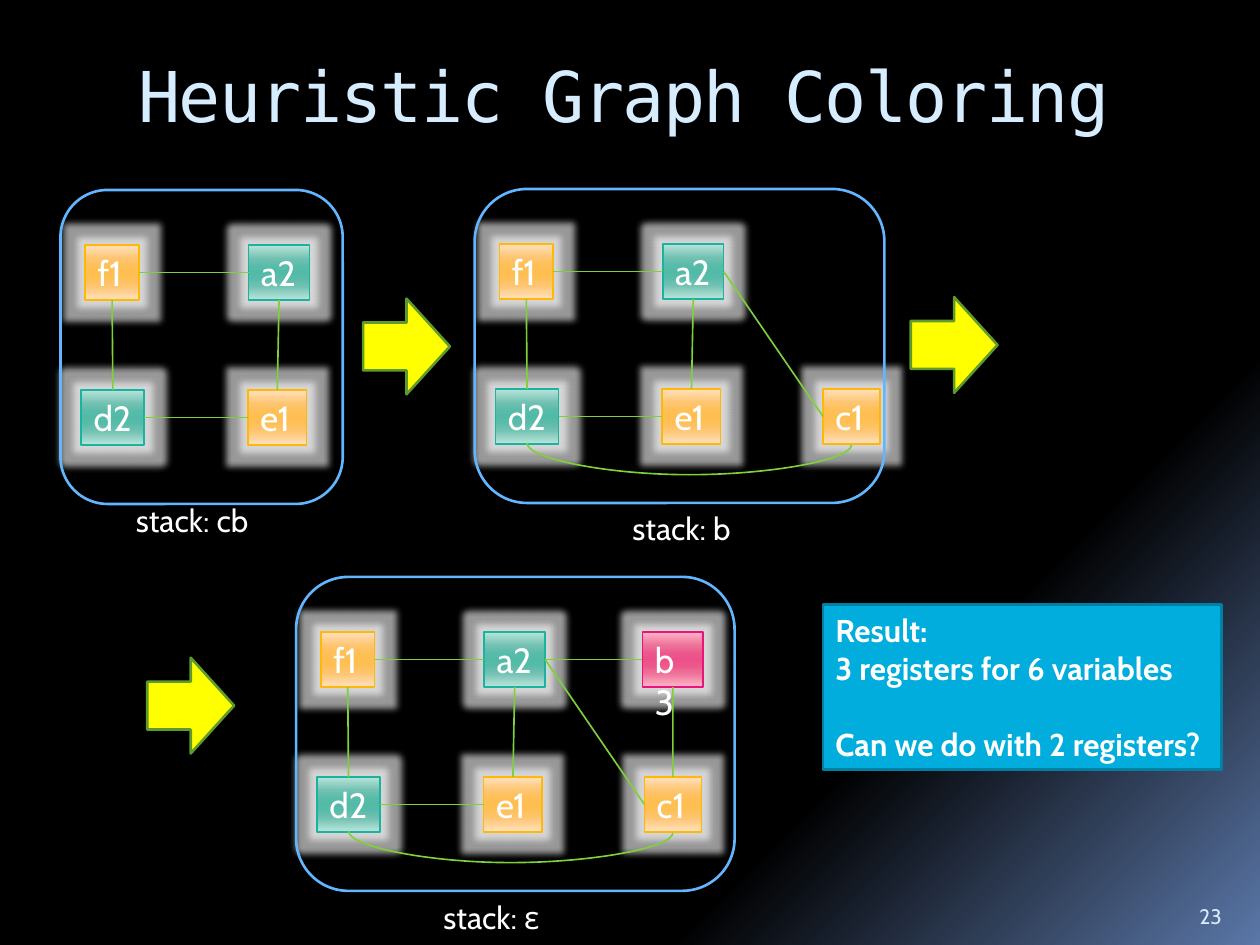
from dataclasses import dataclass

from lxml.etree import SubElement
from pptx import Presentation
from pptx.dml.color import RGBColor
from pptx.enum.shapes import MSO_CONNECTOR as Link, MSO_SHAPE as Kind
from pptx.enum.text import MSO_ANCHOR as Anchor, MSO_AUTO_SIZE as Auto, PP_ALIGN as Align
from pptx.oxml.ns import qn
from pptx.util import Cm, Pt

BLACK = RGBColor(0x00, 0x00, 0x00)
WHITE = RGBColor(0xFF, 0xFF, 0xFF)
NAVY = RGBColor(0x5B, 0x77, 0xA8)
PALE = RGBColor(0xD6, 0xEC, 0xFF)
SKY = RGBColor(0x61, 0xB6, 0xFF)
GREEN = RGBColor(0x7F, 0xD1, 0x3B)
MOSS = RGBColor(0x5E, 0x9B, 0x2C)
YELLOW = RGBColor(0xFF, 0xFF, 0x00)
CYAN = RGBColor(0x00, 0xAD, 0xDC)
TEAL = RGBColor(0x00, 0x80, 0xA3)

# One look per register: edge colour, then the tones from rim to centre
LOOKS = {
    "1": (RGBColor(0xFE, 0xB8, 0x0A), RGBColor(0xFF, 0xE1, 0xBF), RGBColor(0xFE, 0xC5, 0x70),
          RGBColor(0xFE, 0xBF, 0x55), RGBColor(0xFE, 0xBE, 0x51)),
    "2": (RGBColor(0x1A, 0xB3, 0x9F), RGBColor(0xBB, 0xE5, 0xDB), RGBColor(0x71, 0xC1, 0xB2),
          RGBColor(0x57, 0xBB, 0xA9), RGBColor(0x53, 0xBA, 0xA8)),
    "3": (RGBColor(0xEA, 0x15, 0x7A), RGBColor(0xFF, 0xB6, 0xC9), RGBColor(0xED, 0x71, 0x98),
          RGBColor(0xEC, 0x56, 0x8B), RGBColor(0xEC, 0x52, 0x89)),
}
STEPS = (0, 25, 40, 50, 60, 75, 100)

BODY = {"name": "Cabin", "size": Pt(18)}
BOLD = BODY | {"bold": True}
NODE = BODY | {"size": Pt(20)}
SMALL = BODY | {"size": Pt(12)}
HEAD = {"name": "DejaVu Sans Mono", "size": Pt(40)}

HIGH, DROP = 1.11, 2.92
TOP, LEFT, BASE, RIGHT = range(4)


@dataclass
class Node:
    x: float
    row: int
    wide: float


@dataclass
class Graph:
    x: float
    y: float
    wide: float
    names: tuple
    label: str
    at: tuple


NODES = {
    "f1": Node(0, 0, 1.08), "a2": Node(3.29, 0, 1.23), "b3": Node(6.48, 0, 1.23),
    "d2": Node(-0.08, 1, 1.27), "e1": Node(3.28, 1, 1.18), "c1": Node(6.52, 1, 1.15),
}
EDGES = (
    ("f1", RIGHT, "a2", LEFT), ("a2", RIGHT, "b3", LEFT), ("d2", TOP, "f1", BASE),
    ("e1", LEFT, "d2", RIGHT), ("a2", BASE, "e1", TOP), ("b3", BASE, "c1", TOP),
    ("a2", RIGHT, "c1", LEFT),
)
GRAPHS = (
    Graph(6.47, 12.74, 8.84, tuple(NODES), "stack: ε", (8.69, 17.98, 2.49, 1.02)),
    Graph(10.07, 4.92, 8.26, ("f1", "a2", "d2", "e1", "c1"), "stack: b",
          (12.5, 10.13, 2.54, 1.02)),
    Graph(1.72, 4.94, 5.69, ("f1", "a2", "d2", "e1"), "stack: cb", (2.49, 9.98, 2.82, 1.02)),
)
ARROWS = ((18.36, 5.99), (7.32, 6.02), (2.97, 13.26))


def shade(root, stops, angle: int) -> None:
    """Replace the stops of the gradient found under root."""
    grad = root.find(".//" + qn("a:gradFill"))
    bag = grad.find(qn("a:gsLst"))
    for old in list(bag):
        bag.remove(old)
    for pos, tone in stops:
        stop = SubElement(bag, qn("a:gs"), pos=str(pos * 1000))
        SubElement(stop, qn("a:srgbClr"), val=str(tone))
    grad.find(qn("a:lin")).set("ang", str(angle * 60000))


def write(frame, lines, form: dict, tone=WHITE, wrap=True, anchor=Anchor.TOP) -> None:
    frame.word_wrap = wrap
    frame.vertical_anchor = anchor
    for i, line in enumerate(lines):
        para = frame.paragraphs[0] if i == 0 else frame.add_paragraph()
        para.alignment = Align.LEFT
        run = para.add_run()
        run.text = line
        for key, value in form.items():
            setattr(run.font, key, value)
        run.font.color.rgb = tone


def label(slide, text: str, box: tuple, form: dict, tone=WHITE, anchor=Anchor.TOP) -> None:
    frame = slide.shapes.add_textbox(*map(Cm, box)).text_frame
    write(frame, [text], form, tone, False, anchor)


def block(slide, kind, box: tuple, edge, width=1.5, fill=None):
    shape = slide.shapes.add_shape(kind, *map(Cm, box))
    shape.shadow.inherit = False
    shape.line.color.rgb = edge
    shape.line.width = Pt(width)
    if fill is None:
        shape.fill.background()
    else:
        shape.fill.solid()
        shape.fill.fore_color.rgb = fill
    return shape


def square(slide, name: str, x: float, y: float, wide: float):
    """Draw a glowing node in the look of its register."""
    edge, *tones = LOOKS[name[-1]]
    shape = block(slide, Kind.RECTANGLE, (x, y, wide, HIGH), edge, 0.94)
    shape.fill.gradient()
    props = shape._element.spPr
    shade(props, zip(STEPS, tones + tones[-2::-1]), 90)
    glow = SubElement(props.find(qn("a:effectLst")), qn("a:glow"), rad="101600")
    tint = SubElement(glow, qn("a:srgbClr"), val=str(WHITE))
    SubElement(tint, qn("a:alpha"), val="60000")
    write(shape.text_frame, [name], NODE, wrap=False)
    shape.text_frame.auto_size = Auto.SHAPE_TO_FIT_TEXT
    return shape


def wire(slide, kind):
    line = slide.shapes.add_connector(kind, 0, 0, 0, 0)
    line.line.color.rgb = GREEN
    line.line.width = Pt(0.94)
    SubElement(line._element.spPr, qn("a:effectLst"))
    return line


def sag(slide, start, end) -> None:
    """Hang a curve below two nodes: a thin upright connector, turned."""
    line = wire(slide, Link.CURVE)
    left = start.left + start.width // 2
    span = end.left + end.width // 2 - left
    thin = Cm(0.04)
    line.left, line.top = left + (span - thin) // 2, start.top + start.height - span // 2
    line.width, line.height = thin, span
    props = line._element.spPr
    form = props.find(qn("a:xfrm"))
    form.set("rot", str(270 * 60000))
    form.set("flipH", "1")
    bag = props.find(qn("a:prstGeom")).find(qn("a:avLst"))
    SubElement(bag, qn("a:gd"), name="adj1", fmla="val 1600000")


def draw(slide, graph: Graph) -> None:
    boxes = {}
    for name in graph.names:
        node = NODES[name]
        boxes[name] = square(slide, name, graph.x + node.x, graph.y + node.row * DROP, node.wide)
    for start, out, end, into in EDGES:
        if start in boxes and end in boxes:
            line = wire(slide, Link.STRAIGHT)
            line.begin_connect(boxes[start], out)
            line.end_connect(boxes[end], into)
    if "c1" in boxes:
        sag(slide, boxes["d2"], boxes["c1"])
    block(slide, Kind.ROUNDED_RECTANGLE, (graph.x - 0.5, graph.y - 1.11, graph.wide, 6.33), SKY)
    label(slide, graph.label, graph.at, BODY)


def main() -> None:
    deck = Presentation()
    deck.slide_width, deck.slide_height = Cm(25.4), Cm(19.05)
    slide = deck.slides.add_slide(deck.slide_layouts[5])
    slide.background.fill.gradient()
    shade(slide._element, ((65, BLACK), (73, BLACK), (100, NAVY)), 45)

    title = slide.shapes.title
    title.left, title.top, title.width, title.height = map(Cm, (2.54, 0.64, 21.59, 2.54))
    write(title.text_frame, ["Heuristic Graph Coloring"], HEAD, PALE, anchor=Anchor.MIDDLE)
    title.text_frame.paragraphs[0].runs[0].font._element.set("spc", "-100")

    for graph in GRAPHS:
        draw(slide, graph)
    for spot in ARROWS:
        block(slide, Kind.RIGHT_ARROW, (*spot, 1.75, 1.93), MOSS, fill=YELLOW)

    result = block(slide, Kind.RECTANGLE, (16.59, 12.19, 8.03, 3.33), TEAL, fill=CYAN)
    write(result.text_frame, ["Result:", "3 registers for 6 variables",
                              "Can we do with 2 registers?"], BOLD)
    result.text_frame.paragraphs[-1].space_before = Pt(22)
    label(slide, "23", (23.93, 17.83, 1.27, 1.02), SMALL, PALE, Anchor.BOTTOM)
    deck.save("out.pptx")


if __name__ == "__main__":
    main()
